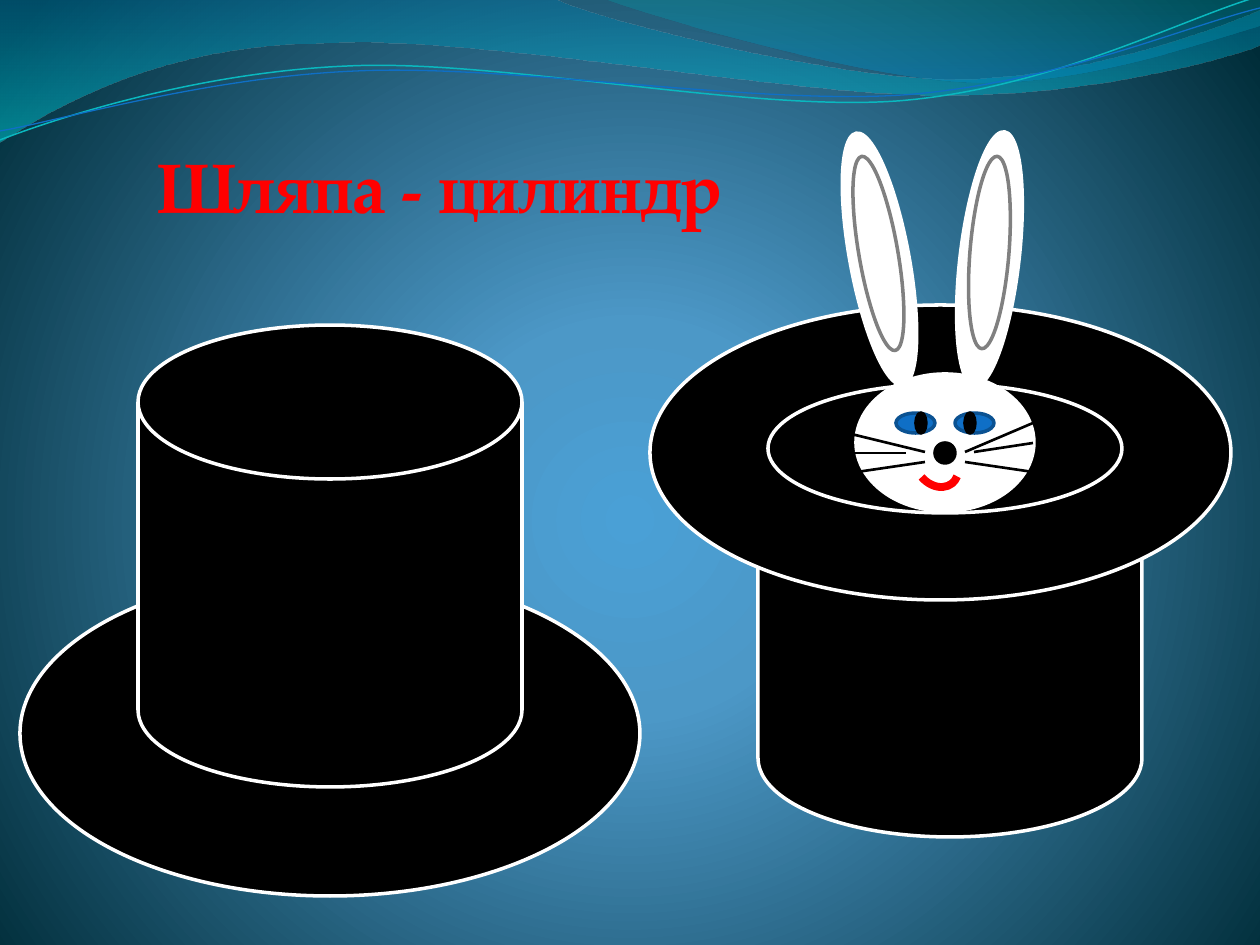
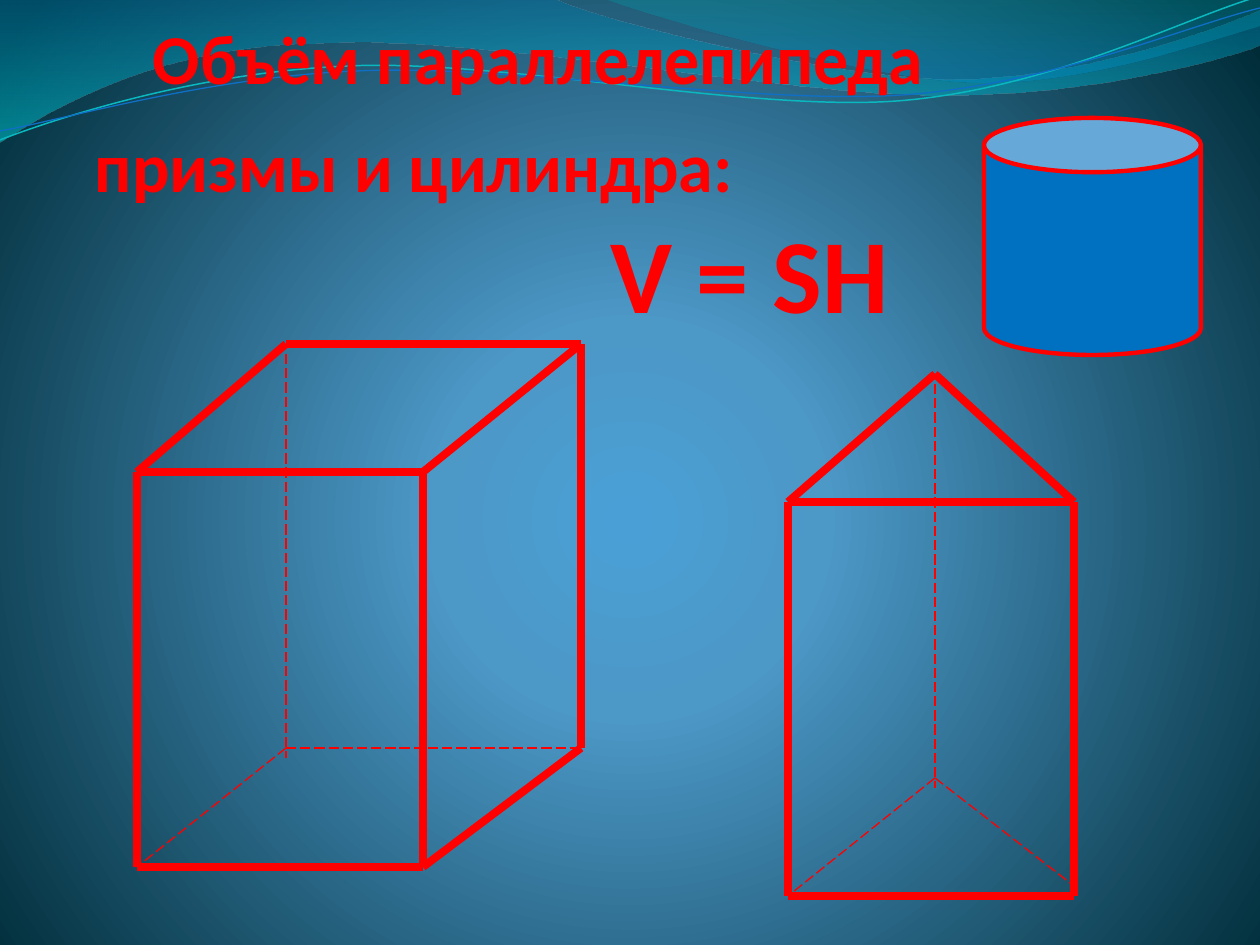
import math
from dataclasses import dataclass

from pptx import Presentation
from pptx import util as u
from pptx.dml.color import RGBColor
from pptx.enum import dml, shapes, text
from pptx.oxml import parse_xml
from pptx.oxml.ns import nsdecls, qn

PX = 914400 / 126
SHAPE = shapes.MSO_SHAPE


@dataclass(frozen=True)
class Theme:
    red: str = "FF0000"
    black: str = "000000"
    white: str = "FFFFFF"
    grey: str = "808080"
    iris: str = "0F6FC6"
    iris_rim: str = "0B5292"
    can: str = "0070C0"
    aqua: str = "0AB8BF"
    serif: str = "TeX Gyre Pagella"
    sans: str = "Calibri"
    dash_size: int = 36
    heading_size: int = 40
    formula_size: int = 60
    outline: float = 2
    whisker: float = 1.5
    edge: float = 4.5
    hidden_edge: float = 0.75


T = Theme()

# Gradient stops: position, colour, opacity (all in percent)
BACKDROP = [(0, "4AA0D6", 100), (25, "4C98C7", 100), (100, "002C38", 100)]
# A step with one point is a straight line, one with three is a Bezier curve
WAVE_FILLS = [
    ([[(0, -1)], [(554, -1)],
      [(600, 21), (837, 79), (955, 79)], [(1075, 79), (1207, 33), (1260, 11)],
      [(1261, 45)],
      [(1239, 55), (1096, 96), (940, 95)], [(783, 95), (481, 35), (324, 43)],
      [(163, 44), (58, 105), (-1, 142)], [(0, -1)]],
     [(0, "0074A1", 45), (100, "00C6CF", 55)]),
    ([[(604, -1)], [(641, 14), (859, 78), (969, 82)],
      [(1079, 87), (1211, 40), (1260, 26)], [(1260, 0)], [(604, -1)]],
     [(0, "00A1A9", 30), (80, "008BBF", 45)]),
]
WAVE_LINES = [
    ([[(0, 140)], [(60, 117), (199, 72), (349, 66)],
      [(498, 59), (747, 112), (898, 101)], [(1050, 89), (1182, 19), (1257, -3)]],
     T.aqua, 0.85),
    ([[(0, 131)], [(59, 121), (207, 77), (357, 71)],
      [(508, 64), (752, 105), (903, 95)], [(1053, 84), (1186, 26), (1260, 8)]],
     T.iris, 0.75),
]
WAVE_TILT = -2.7

HAT_TITLE = [("Шляпа", T.heading_size), (" - ", T.dash_size), ("цилиндр", T.heading_size)]
HATS = [
    (SHAPE.OVAL, (20, 571, 620, 325)),
    (SHAPE.FLOWCHART_MAGNETIC_DISK, (138, 325, 384, 462)),
    (SHAPE.FLOWCHART_MAGNETIC_DISK, (758, 364, 384, 473)),
    (SHAPE.OVAL, (650, 305, 581, 295)),
    (SHAPE.OVAL, (768, 384, 354, 129)),
]
FACE = [  # place, fill, line
    ((856, 374, 178, 137), T.white, T.white),
    ((955, 413, 39, 20), T.iris, T.iris_rim),
    ((896, 413, 39, 20), T.iris, T.iris_rim),
    ((916, 413, 10, 20), T.black, T.black),
    ((965, 413, 10, 20), T.black, T.black),
    ((935, 443, 20, 20), T.black, T.black),
]
WHISKERS = [
    ((965, 452), (1033, 423)), ((965, 462), (1033, 472)), ((974, 452), (1033, 443)),
    ((925, 462), (857, 472)), ((925, 452), (847, 433)), ((906, 453), (847, 453)),
]
MOUTH = (917, 440, 39, 49)
EARS = [  # place, line, turn
    ((850, 131, 59, 256), T.white, 349.5),
    ((859, 155, 39, 197), T.grey, 350.2),
    ((960, 131, 59, 256), T.white, 6.7),
    ((970, 156, 39, 193), T.grey, 4.6),
]

VOLUME_TITLE = ("Объём параллелепипеда ", (138, 0, 816, 99))
VOLUME_LINES = [
    ("призмы и цилиндра:", (20, 108, 788, 99), T.heading_size, text.PP_ALIGN.CENTER),
    ("V = SH", (611, 236, 315, 99), T.formula_size, text.PP_ALIGN.LEFT),
]
CAN = (984, 118, 217, 237)
# Corners are named by letter; edges are pairs of letters
SOLIDS = [
    {"corners": {"A": (137, 472), "B": (423, 472), "C": (423, 867), "D": (137, 867),
                 "E": (286, 344), "F": (581, 344), "G": (581, 748), "H": (286, 748),
                 "t": (286, 354), "f": (286, 758)},
     "visible": "AD AB BC DC CG BF AE EF FG",
     "hidden": "tf HG HD"},
    {"corners": {"A": (788, 502), "B": (1074, 502), "C": (1074, 896), "D": (788, 896),
                 "E": (935, 374), "H": (935, 778),
                 "c": (1074, 886), "t": (935, 384), "f": (935, 788)},
     "visible": "AD BC DC AB AE BE",
     "hidden": "HD Hc tf"},
]


def emu(values):
    return [round(value * PX) for value in values]


def rgb(code):
    return RGBColor.from_string(code)


def set_gradient(fill, owner, stops, direction):
    """Give fill, which lies inside the XML element owner, the listed stops."""
    fill.gradient()
    old = next(owner.iter(qn("a:gradFill")))
    marks = "".join(
        f'<a:gs pos="{place * 1000}"><a:srgbClr val="{code}">'
        f'<a:alpha val="{opacity * 1000}"/></a:srgbClr></a:gs>'
        for place, code, opacity in stops)
    new = parse_xml(f'<a:gradFill {nsdecls("a")} rotWithShape="1">'
                    f"<a:gsLst>{marks}</a:gsLst>{direction}</a:gradFill>")
    old.getparent().replace(old, new)


def turn_point(point, degrees):
    x, y = point
    cos, sin = math.cos(math.radians(degrees)), math.sin(math.radians(degrees))
    return x * cos - y * sin, x * sin + y * cos


def add_wave(page, steps, close, tilt=0):
    """Draw the steps as lines and curves, in a frame turned by tilt degrees."""
    start, *rest = [emu(turn_point(point, -tilt)) for step in steps for point in step]
    builder = page.shapes.build_freeform(*start)
    builder.add_line_segments(rest, close=close)
    wave = builder.convert_to_shape()
    wave.shadow.inherit = False
    lines = iter(list(wave.element.iter(qn("a:lnTo"))))
    for step in steps[1:]:
        group = [next(lines) for _ in step]
        if len(group) == 3:
            curve = parse_xml(f'<a:cubicBezTo {nsdecls("a")}/>')
            group[0].addprevious(curve)
            for line in group:
                curve.append(line[0])
                line.getparent().remove(line)
    half_width, half_height = wave.width / 2, wave.height / 2
    x, y = turn_point((wave.left + half_width, wave.top + half_height), tilt)
    wave.left, wave.top = round(x - half_width), round(y - half_height)
    wave.rotation = tilt
    return wave


def dress_master(deck, page):
    """Set the shared background and move the waves from page to the master."""
    master = deck.slide_master
    set_gradient(master.background.fill, master.element, BACKDROP,
                 '<a:path path="circle"><a:fillToRect l="10000" t="110000" '
                 'r="10000" b="100000"/></a:path>')
    waves = []
    for steps, stops in WAVE_FILLS:
        wave = add_wave(page, steps, True)
        set_gradient(wave.fill, wave.element, stops, '<a:lin ang="5400000" scaled="0"/>')
        wave.line.fill.background()
        waves.append(wave)
    for steps, colour, width in WAVE_LINES:
        wave = add_wave(page, steps, False, WAVE_TILT)
        wave.fill.background()
        set_line(wave.line, colour, width)
        waves.append(wave)
    for number, wave in enumerate(waves, 100):
        wave.element.nvSpPr.cNvPr.id = number
        master.element.cSld.spTree.append(wave.element)


def set_line(line, colour, width):
    line.color.rgb = rgb(colour)
    line.width = u.Pt(width)


def add_figure(page, kind, place, fill, line, width=T.outline, turn=0):
    figure = page.shapes.add_shape(kind, *emu(place))
    figure.shadow.inherit = False
    figure.rotation = turn
    if fill:
        figure.fill.solid()
        figure.fill.fore_color.rgb = rgb(fill)
    else:
        figure.fill.background()
    set_line(figure.line, line, width)
    return figure


def add_line(page, start, end, colour, width, dashed=False):
    line = page.shapes.add_connector(shapes.MSO_CONNECTOR.STRAIGHT, *emu(start + end))
    set_line(line.line, colour, width)
    if dashed:
        line.line.dash_style = dml.MSO_LINE.LONG_DASH
    line.element.spPr.append(parse_xml(f'<a:effectLst {nsdecls("a")}/>'))


def write(box, place, spans, font, align, anchor, insets=None):
    """Place a box and fill it with (text, size) spans of bold red type."""
    box.left, box.top, box.width, box.height = emu(place)
    frame = box.text_frame
    frame.word_wrap = True
    frame.auto_size = text.MSO_AUTO_SIZE.NONE
    frame.vertical_anchor = anchor
    if insets is not None:
        frame.margin_left = frame.margin_right = insets
        frame.margin_top = frame.margin_bottom = insets
    para = frame.paragraphs[0]
    para.alignment = align
    for words, size in spans:
        span = para.add_run()
        span.text = words
        span.font.name = font
        span.font.size = u.Pt(size)
        span.font.bold = True
        span.font.color.rgb = rgb(T.red)


def fill_hat_page(page):
    for kind, place in HATS:
        add_figure(page, kind, place, T.black, T.white)
    for place, fill, line in FACE:
        add_figure(page, SHAPE.OVAL, place, fill, line)
    for start, end in WHISKERS:
        add_line(page, start, end, T.black, T.whisker)
    mouth = add_figure(page, SHAPE.ARC, MOUTH, None, T.red, T.edge, 140.1)
    mouth.adjustments[0] = 149.94
    mouth.adjustments[1] = 0
    for place, line, turn in EARS:
        add_figure(page, SHAPE.OVAL, place, T.white, line, turn=turn)
    write(page.shapes.title, (129, 137, 620, 97), HAT_TITLE, T.serif,
          text.PP_ALIGN.CENTER, text.MSO_ANCHOR.TOP)


def fill_volume_page(page):
    for solid in SOLIDS:
        corners = solid["corners"]
        for group, width in (("visible", T.edge), ("hidden", T.hidden_edge)):
            for start, end in solid[group].split():
                add_line(page, corners[start], corners[end], T.red, width, group == "hidden")
    can = add_figure(page, SHAPE.CAN, CAN, T.can, T.red, 2.5)
    can.adjustments[0] = 0.25
    words, place = VOLUME_TITLE
    write(page.shapes.title, place, [(words, T.heading_size)], T.sans,
          text.PP_ALIGN.CENTER, text.MSO_ANCHOR.BOTTOM, 0)
    for words, place, size, align in VOLUME_LINES:
        box = page.shapes.add_textbox(*emu(place))
        write(box, place, [(words, size)], T.sans, align, text.MSO_ANCHOR.BOTTOM, 0)


def main():
    deck = Presentation()
    deck.slide_width, deck.slide_height = emu((1260, 945))
    title_only = deck.slide_layouts[5]
    hat_page, volume_page = (deck.slides.add_slide(title_only) for _ in range(2))
    dress_master(deck, hat_page)
    fill_hat_page(hat_page)
    fill_volume_page(volume_page)
    deck.save("out.pptx")


if __name__ == "__main__":
    main()
